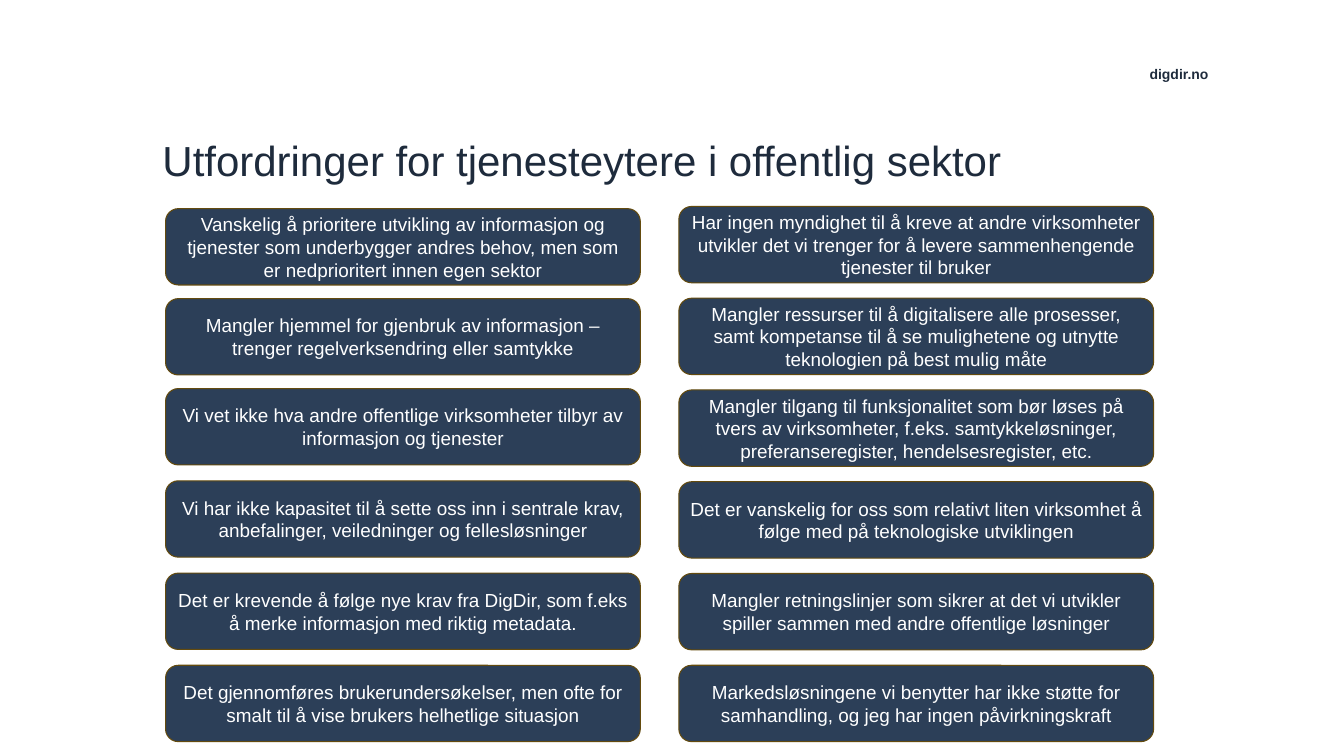
import pptx
import pptx.util
import pptx.dml.color
import pptx.enum.shapes
import pptx.enum.text

Pt = pptx.util.Pt
ALIGN = pptx.enum.text.PP_ALIGN

FONT = "Arial"
COLOURS = {
    "ink": "1E2B3C",
    "card": "2C3F58",
    "border": "644B0E",
    "card_text": "FFFFFF",
}

CARD_WIDTH, CARD_HEIGHT = 452.2, 72.7

SECTOR_CHALLENGES = [
    "Vanskelig å prioritere utvikling av informasjon og tjenester som underbygger andres behov, men som er nedprioritert innen egen sektor",
    "Mangler hjemmel for gjenbruk av informasjon – trenger regelverksendring eller samtykke",
    "Vi vet ikke hva andre offentlige virksomheter tilbyr av informasjon og tjenester",
    "Vi har ikke kapasitet til å sette oss inn i sentrale krav, anbefalinger, veiledninger og fellesløsninger",
    "Det er krevende å følge nye krav fra DigDir, som f.eks å merke informasjon med riktig metadata.",
    "Det gjennomføres brukerundersøkelser, men ofte for smalt til å vise brukers helhetlige situasjon",
]
CAPACITY_CHALLENGES = [
    "Har ingen myndighet til å kreve at andre virksomheter utvikler det vi trenger for å levere sammenhengende tjenester til bruker",
    "Mangler ressurser til å digitalisere alle prosesser, samt kompetanse til å se mulighetene og utnytte teknologien på best mulig måte",
    "Mangler tilgang til funksjonalitet som bør løses på tvers av virksomheter, f.eks. samtykkeløsninger, preferanseregister, hendelsesregister, etc.",
    "Det er vanskelig for oss som relativt liten virksomhet å følge med på teknologiske utviklingen",
    "Mangler retningslinjer som sikrer at det vi utvikler spiller sammen med andre offentlige løsninger",
    "Markedsløsningene vi benytter har ikke støtte for samhandling, og jeg har ingen påvirkningskraft",
]


def colour(name):
    return pptx.dml.color.RGBColor.from_string(COLOURS[name])


def write(frame, text, size, colour_name, bold=False, align=ALIGN.LEFT):
    frame.word_wrap = True
    frame.text = text
    para = frame.paragraphs[0]
    para.alignment = align
    for span in para.runs:
        span.font.name = FONT
        span.font.size = Pt(size)
        span.font.bold = bold
        span.font.color.rgb = colour(colour_name)


def add_label(page, left, top, width, height, text, size, bold=False, insets=None):
    box = page.shapes.add_textbox(Pt(left), Pt(top), Pt(width), Pt(height))
    frame = box.text_frame
    if insets:
        side, end = insets
        frame.margin_left = frame.margin_right = Pt(side)
        frame.margin_top = frame.margin_bottom = Pt(end)
    write(frame, text, size, "ink", bold)


def add_card(page, left, top, text):
    card = page.shapes.add_shape(
        pptx.enum.shapes.MSO_SHAPE.ROUNDED_RECTANGLE,
        Pt(left), Pt(top), Pt(CARD_WIDTH), Pt(CARD_HEIGHT))
    card.shadow.inherit = False
    card.fill.solid()
    card.fill.fore_color.rgb = colour("card")
    card.line.color.rgb = colour("border")
    card.line.width = Pt(1)
    card.text_frame.vertical_anchor = pptx.enum.text.MSO_ANCHOR.MIDDLE
    write(card.text_frame, text, 18, "card_text", align=ALIGN.CENTER)


def add_card_column(page, left, tops, texts):
    for top, text in zip(tops, texts):
        add_card(page, left, top, text)


def main():
    deck = pptx.Presentation()
    deck.slide_width, deck.slide_height = Pt(1280.16), Pt(720)
    page = deck.slides.add_slide(deck.slide_layouts[6])

    # Site address and title
    add_label(page, 1087.9, 59, 81.4, 23.8, "digdir.no", 13.3, bold=True)
    add_label(page, 145.4, 123.1, 953.3, 58.3,
              "Utfordringer for tjenesteytere i offentlig sektor", 40, insets=(9.4, 5))

    # Two columns of challenges; the left one is unevenly spaced
    add_card_column(page, 157.7, [198.7, 284.4, 370.1, 457.9, 545.8, 633.6],
                    SECTOR_CHALLENGES)
    add_card_column(page, 646.6, [196.6 + 87.4 * row for row in range(6)],
                    CAPACITY_CHALLENGES)

    deck.save("out.pptx")


if __name__ == "__main__":
    main()
